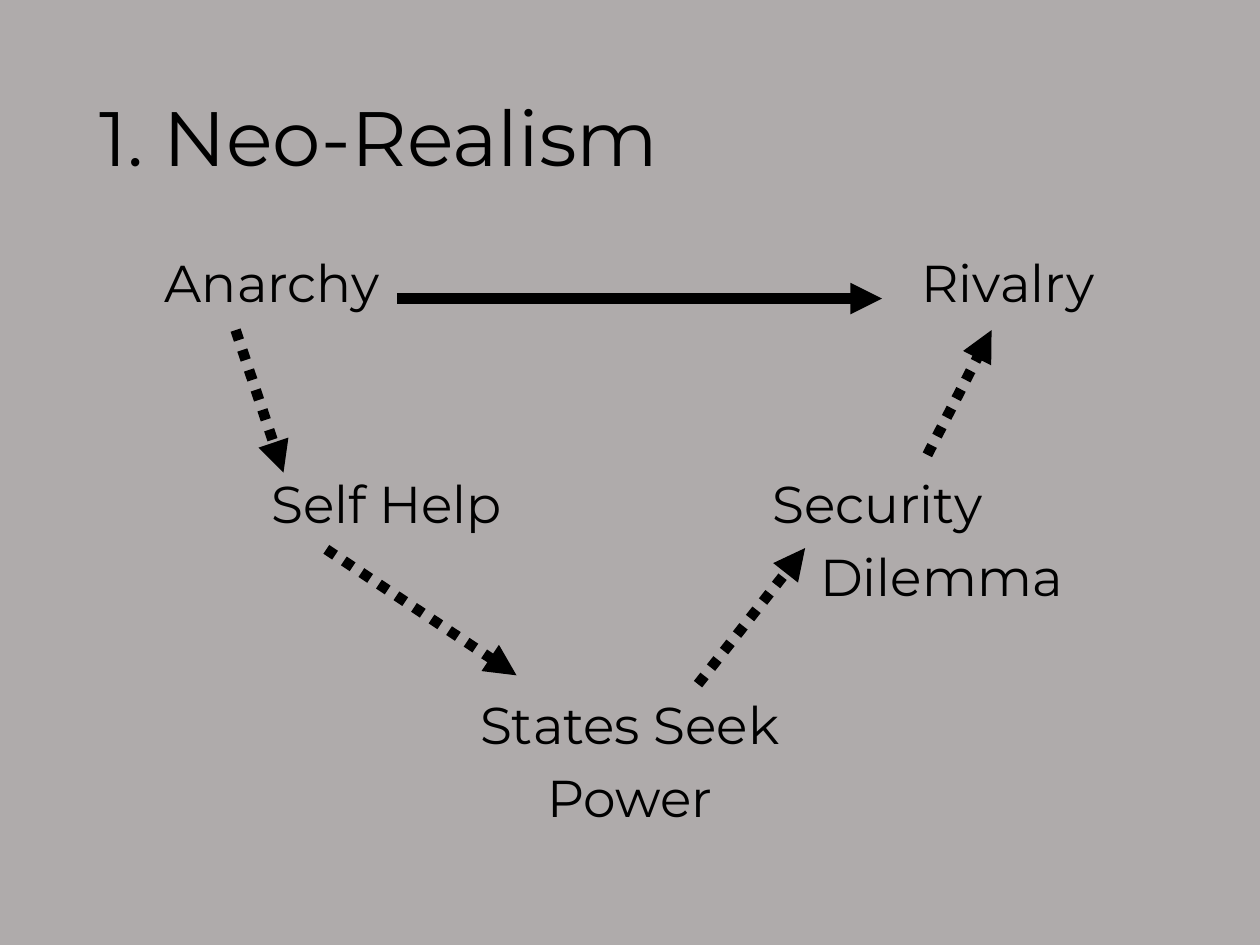
from pptx import Presentation
from pptx.dml.color import RGBColor
from pptx.enum.dml import MSO_LINE
from pptx.enum.shapes import MSO_CONNECTOR
from pptx.enum.text import MSO_ANCHOR, PP_ALIGN
from pptx.oxml.ns import qn
from pptx.util import Inches, Pt
from lxml import etree

LEFT, MID = PP_ALIGN.LEFT, PP_ALIGN.CENTER
CENTRE = MSO_ANCHOR.MIDDLE
TOP = MSO_ANCHOR.TOP
DOTS = MSO_LINE.ROUND_DOT
LINE = MSO_CONNECTOR.STRAIGHT

HUE = {"back": "AFABAB", "ink": "000000"}
FONT = "Montserrat"
WIDE, HIGH = 10, 7.5
BODY, ROW = 2.05, 4.09 / 7

LABELS = (
    (1.26, 0, 1.8, ("Anarchy",), MID, 0),
    (7.1, 0, 1.8, ("Rivalry",), MID, 0),
    (2.07, 3, 2, ("Self Help",), MID, 0),
    (6.13, 3, 2.6, ("Security", "Dilemma"), LEFT, 0.38),
    (3.7, 6, 2.6, ("States Seek", "Power"), MID, 0),
)
STEPS = (
    ((1.87, 2.62), (2.25, 3.75)),
    ((2.59, 4.36), (4.1, 5.36)),
    ((5.54, 5.43), (6.39, 4.35)),
    ((7.36, 3.61), (7.87, 2.62)),
)
RESULT = ((3.15, 2.37), (7, 2.37))


def paint(fill, name):
    """Give a fill one solid colour."""
    fill.solid()
    fill.fore_color.rgb = RGBColor.from_string(HUE[name])


def style(item, form):
    """Set each format value on an item."""
    for key, value in form.items():
        setattr(item, key, value)


def write(slide, area, lines, size, align=LEFT, anchor=TOP, indent=0):
    """Add a text box of paragraphs, with the last one indented."""
    box = slide.shapes.add_textbox(*map(Inches, area))
    frame = box.text_frame
    style(frame, {"word_wrap": True, "vertical_anchor": anchor,
                  "margin_left": 0, "margin_right": 0,
                  "margin_top": 0, "margin_bottom": 0})
    frame.text = "\n".join(lines)
    for rank, para in enumerate(frame.paragraphs):
        style(para, {"alignment": align, "line_spacing": 0.9,
                     "space_before": Pt(9.6 if rank else 0)})
        style(para.font, {"name": FONT, "size": Pt(size)})
        paint(para.font.fill, "ink")
    if indent:
        para._p.get_or_add_pPr().set("marL", str(Inches(indent)))


def arrow(slide, start, end, dash=None):
    """Add a thick straight arrow, dotted on demand."""
    link = slide.shapes.add_connector(LINE, *map(Inches, start + end))
    paint(link.line.fill, "ink")
    style(link.line, {"width": Pt(6), "dash_style": dash})
    form = link._element.spPr
    etree.SubElement(form.find(qn("a:ln")), qn("a:tailEnd"), type="triangle")
    etree.SubElement(form, qn("a:effectLst"))


def main():
    """Build the slide and save it."""
    deck = Presentation()
    style(deck, {"slide_width": Inches(WIDE), "slide_height": Inches(HIGH)})
    slide = deck.slides.add_slide(deck.slide_layouts[6])
    paint(slide.background.fill, "back")
    write(slide, (0.79, 0.4, 8.42, 1.45), ("1. Neo-Realism",), 44,
          anchor=CENTRE)
    for left, row, width, lines, align, indent in LABELS:
        area = (left, BODY + row * ROW, width, len(lines) * ROW)
        write(slide, area, lines, 29.6, align, indent=indent)
    for start, end in STEPS:
        arrow(slide, start, end, DOTS)
    arrow(slide, *RESULT)
    deck.save("out.pptx")


if __name__ == "__main__":
    main()
